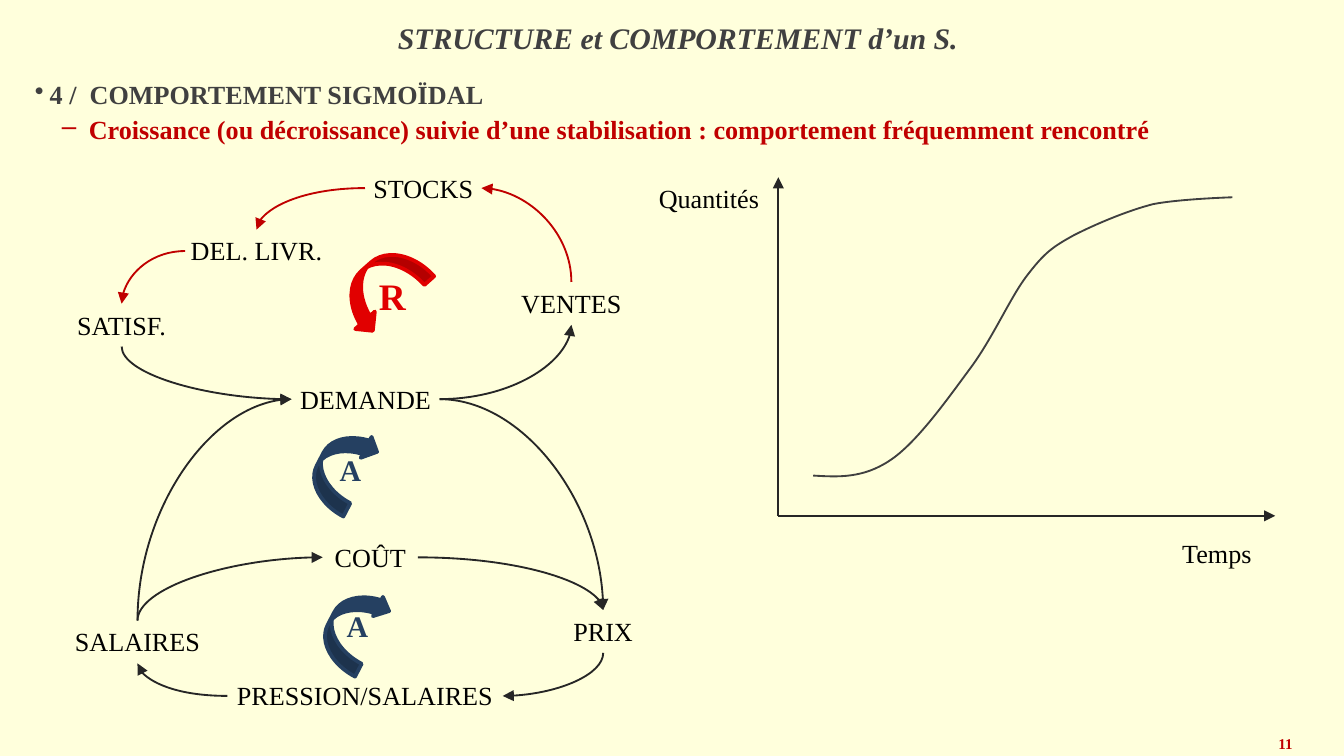
from lxml import etree
from pptx import Presentation
from pptx import util as u
from pptx.dml.color import RGBColor
from pptx.enum import shapes, text
from pptx.oxml.ns import qn

FONT = "Times New Roman"
COLORS = {"paper": "FFFFDC", "heading": "404040", "accent": "C00000", "label": "000000",
          "arrow": "262626", "balance": "254061", "reinforce": "E10000"}
TOP, LEFT, BOTTOM, RIGHT = range(4)

# ---- Content (lengths in cm) ----
TITLE = "STRUCTURE et COMPORTEMENT d’un S."
PAGE = "11"
# text, colour, left margin, indent, bullet
OUTLINE = [
    ("4 /  COMPORTEMENT SIGMOÏDAL", "heading", 0.28, -0.28, "•"),
    ("Croissance (ou décroissance) suivie d’une stabilisation : comportement "
     "fréquemment rencontré", "accent", 1.02, -0.51, "–"),
]
LABEL_HEIGHT = 0.81
# left, top, width
LABELS = {
    "DEMANDE": (5.51, 7.14, 2.8),
    "COÛT": (6.1, 10.13, 1.8),
    "PRIX": (10.7, 11.53, 1.4),
    "SALAIRES": (1.3, 11.73, 2.6),
    "PRESSION/SALAIRES": (4.3, 12.75, 5.2),
    "VENTES": (9.7, 5.33, 2.2),
    "STOCKS": (6.9, 3.15, 2.2),
    "DEL. LIVR.": (3.5, 4.34, 2.7),
    "SATISF.": (1.3, 5.74, 2.0),
    "Temps": (22.1, 10.06, 1.8),
    "Quantités": (12.3, 3.35, 2.2),
}
INFLUENCES = [
    ("DEMANDE", RIGHT, "PRIX", TOP, "arrow"),
    ("COÛT", RIGHT, "PRIX", TOP, "arrow"),
    ("PRIX", BOTTOM, "PRESSION/SALAIRES", RIGHT, "arrow"),
    ("PRESSION/SALAIRES", LEFT, "SALAIRES", BOTTOM, "arrow"),
    ("SALAIRES", TOP, "DEMANDE", LEFT, "arrow"),
    ("SALAIRES", TOP, "COÛT", LEFT, "arrow"),
    ("DEMANDE", RIGHT, "VENTES", BOTTOM, "arrow"),
    ("VENTES", TOP, "STOCKS", RIGHT, "accent"),
    ("STOCKS", LEFT, "DEL. LIVR.", TOP, "accent"),
    ("DEL. LIVR.", LEFT, "SATISF.", TOP, "accent"),
    ("SATISF.", BOTTOM, "DEMANDE", LEFT, "arrow"),
]
# letter, size, colour, letter box, arrow box, rotation, flips, adjustments
LOOPS = [
    ("A", 16, "balance", (6.17, 8.41, 0.79, 0.94), (6.02, 8.05, 0.89, 1.6),
     27.5, ("flipH", "flipV"), (0.32, 0.5, 0.25)),
    ("A", 16, "balance", (6.3, 11.35, 0.79, 0.94), (6.22, 11.07, 0.91, 1.6),
     27.5, ("flipH", "flipV"), (0.3, 0.45, 0.25)),
    ("R", 20, "reinforce", (6.91, 5.03, 1.04, 1.12), (6.71, 4.55, 0.99, 1.8),
     48.3, ("flipH",), (0.25, 0.5, 0.25)),
]
ORIGIN, AXIS_ENDS = (14.71, 9.75), [(14.71, 3.35), (24.1, 9.75)]
SIGMOID_START = (15.37, 8.99)
# Bézier segments: two control points, then the end point
SIGMOID = [
    [(15.85, 9.02), (16.31, 9.04), (16.81, 8.71)],
    [(17.32, 8.38), (17.91, 7.54), (18.34, 6.96)],
    [(18.77, 6.38), (19.1, 5.61), (19.41, 5.21)],
    [(19.74, 4.78), (19.89, 4.67), (20.29, 4.45)],
    [(20.7, 4.24), (21.29, 3.99), (21.79, 3.86)],
    [(22.3, 3.76), (23.29, 3.73), (23.29, 3.73)],
]


def cm(values):
    return [u.Cm(v) for v in values]


def color(name):
    return RGBColor.from_string(COLORS[name])


def add_words(paragraph, words, size, tint, **style):
    run = paragraph.add_run()
    run.text = words
    formats = {"name": FONT, "size": u.Pt(size), **style}
    for name, value in formats.items():
        setattr(run.font, name, value)
    run.font.color.rgb = color(tint)


def add_frame(box, inset=(0.25, 0.13), **formats):
    holder = slide.shapes.add_textbox(*cm(box))
    frame = holder.text_frame
    across, down = cm(inset)
    settings = {"word_wrap": True, "margin_left": across, "margin_right": across,
                "margin_top": down, "margin_bottom": down, **formats}
    for name, value in settings.items():
        setattr(frame, name, value)
    return holder


def add_line(kind, start, end, tint):
    line = slide.shapes.add_connector(kind, *start, *end)
    line.line.color.rgb = color(tint)
    line.line.width = u.Pt(1)
    etree.SubElement(line.line._get_or_add_ln(), qn("a:tailEnd"), type="triangle")
    etree.SubElement(line._element.spPr, qn("a:effectLst"))
    return line


def side_middle(shape, side):
    x = {LEFT: 0, RIGHT: shape.width}.get(side, shape.width // 2)
    y = {TOP: 0, BOTTOM: shape.height}.get(side, shape.height // 2)
    return shape.left + x, shape.top + y


def add_influence(source, source_side, target, target_side, tint):
    """Quarter-curve arrow; one that leaves vertically is turned by 90 degrees."""
    start, end = side_middle(source, source_side), side_middle(target, target_side)
    arrow = add_line(shapes.MSO_CONNECTOR.CURVE, start, end, tint)
    arrow.begin_connect(source, source_side)
    arrow.end_connect(target, target_side)
    properties = arrow._element.spPr
    properties.find(qn("a:prstGeom")).set("prst", "curvedConnector2")
    if source_side in (TOP, BOTTOM):
        dx, dy = end[0] - start[0], end[1] - start[1]
        xfrm = properties.find(qn("a:xfrm"))
        for name, value in {"rot": 90 * 60000, "flipH": int(dy < 0), "flipV": int(dx > 0)}.items():
            xfrm.set(name, str(value))
        arrow.width, arrow.height = abs(dy), abs(dx)
        arrow.left = (start[0] + end[0] - abs(dy)) // 2
        arrow.top = (start[1] + end[1] - abs(dx)) // 2


prs = Presentation()
prs.slide_width, prs.slide_height = cm((25.4, 14.29))
slide = prs.slides.add_slide(prs.slide_layouts[6])
slide.background.fill.solid()
slide.background.fill.fore_color.rgb = color("paper")

# Title and page number
for words, box, size, tint, italic in [
    (TITLE, (0.51, 0.36, 24.61, 0.69), 16, "heading", True),
    (PAGE, (23.7, 13.82, 1.19, 0.46), 8, "accent", False),
]:
    frame = add_frame(box, (0, 0), vertical_anchor=text.MSO_ANCHOR.MIDDLE).text_frame
    frame.paragraphs[0].alignment = text.PP_ALIGN.CENTER
    add_words(frame.paragraphs[0], words, size, tint, bold=True, italic=italic)

# Outline
frame = add_frame((0.41, 1.35, 24.61, 1.6)).text_frame
for level, (words, tint, margin, indent, bullet) in enumerate(OUTLINE):
    line = frame.add_paragraph() if level else frame.paragraphs[0]
    line.level = level
    line.space_before = u.Pt(2 * level)
    add_words(line, words, 14, tint, bold=True)
    layout = line._p.get_or_add_pPr()
    layout.set("marL", str(u.Cm(margin)))
    layout.set("indent", str(u.Cm(indent)))
    etree.SubElement(layout, qn("a:buChar"), char=bullet)

# Labels of the loops and axes
labels = {}
for words, box in LABELS.items():
    labels[words] = add_frame((*box, LABEL_HEIGHT), (0.1, 0.1),
                              auto_size=text.MSO_AUTO_SIZE.SHAPE_TO_FIT_TEXT)
    line = labels[words].text_frame.paragraphs[0]
    line.alignment = text.PP_ALIGN.CENTER
    add_words(line, words, 14, "label")

# Influences
for source, source_side, target, target_side, tint in INFLUENCES:
    add_influence(labels[source], source_side, labels[target], target_side, tint)

# Loop signs
for letter, size, tint, letter_box, arrow_box, turn, flips, adjustments in LOOPS:
    sign = slide.shapes.add_shape(shapes.MSO_SHAPE.CURVED_LEFT_ARROW, *cm(arrow_box))
    sign.shadow.inherit = False
    sign.rotation = turn
    for flip in flips:
        sign._element.spPr.find(qn("a:xfrm")).set(flip, "1")
    for i, value in enumerate(adjustments):
        sign.adjustments[i] = value
    sign.fill.solid()
    sign.fill.fore_color.rgb = sign.line.color.rgb = color(tint)
    sign.line.width = u.Pt(2)
    frame = add_frame(letter_box, word_wrap=False).text_frame
    add_words(frame.paragraphs[0], letter, size, tint, bold=True)

# Axes
for end in AXIS_ENDS:
    add_line(shapes.MSO_CONNECTOR.STRAIGHT, cm(ORIGIN), cm(end), "arrow")

# Sigmoid: straight segments regrouped by three into Bézier segments
builder = slide.shapes.build_freeform(*cm(SIGMOID_START))
builder.add_line_segments([cm(point) for segment in SIGMOID for point in segment], close=False)
sigmoid = builder.convert_to_shape()
sigmoid.shadow.inherit = False
sigmoid.fill.background()
sigmoid.line.color.rgb = color("heading")
sigmoid.line.width = u.Pt(1)
steps = list(sigmoid._element.iter(qn("a:lnTo")))
outline = steps[0].getparent()
for i in range(0, len(steps), 3):
    bezier = etree.SubElement(outline, qn("a:cubicBezTo"))
    for step in steps[i:i + 3]:
        bezier.append(step[0])
        outline.remove(step)

prs.save("out.pptx")
